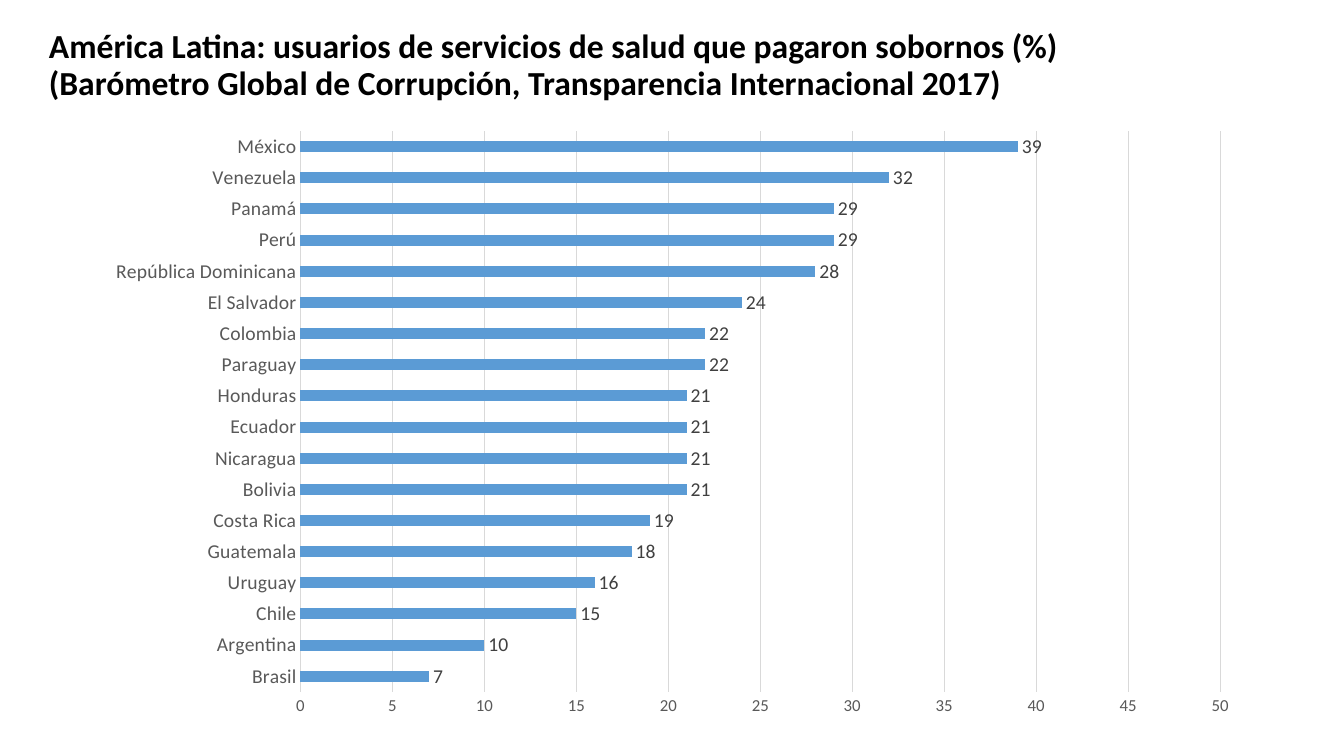
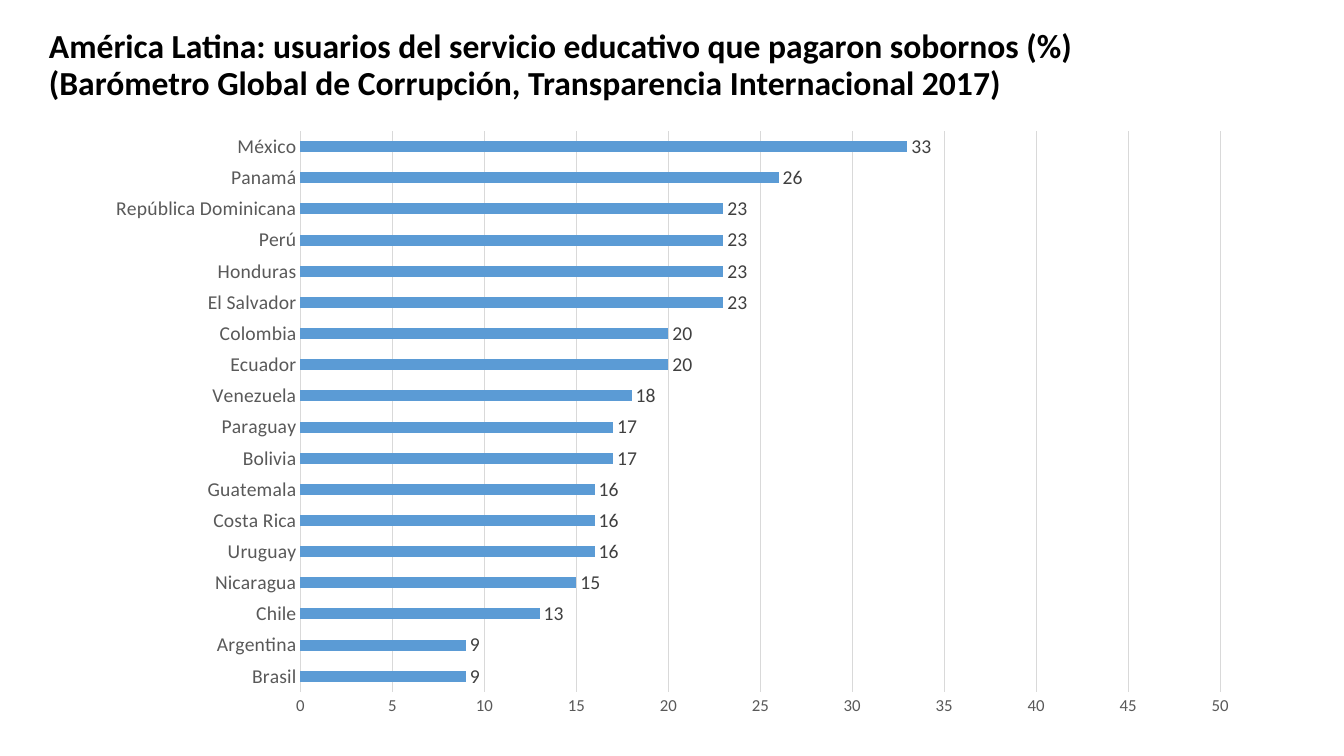
import pptx
import pptx.util
import pptx.chart.data
import pptx.dml.color
import pptx.enum.chart
import pptx.enum.text

PX = 12192000 / 1344  # EMU in one px
FONT = "Calibri"
HUES = {"title": "000000", "bar": "5B9BD5", "grid": "D9D9D9",
        "axis": "595959", "label": "404040"}
SOURCE = "(Barómetro Global de Corrupción, Transparencia Internacional 2017)"

HEALTH = {
    "Brasil": 7, "Argentina": 10, "Chile": 15, "Uruguay": 16,
    "Guatemala": 18, "Costa Rica": 19, "Bolivia": 21, "Nicaragua": 21,
    "Ecuador": 21, "Honduras": 21, "Paraguay": 22, "Colombia": 22,
    "El Salvador": 24, "República Dominicana": 28, "Perú": 29,
    "Panamá": 29, "Venezuela": 32, "México": 39,
}
SCHOOL = {
    "Brasil": 9, "Argentina": 9, "Chile": 13, "Nicaragua": 15,
    "Uruguay": 16, "Costa Rica": 16, "Guatemala": 16, "Bolivia": 17,
    "Paraguay": 17, "Venezuela": 18, "Ecuador": 20, "Colombia": 20,
    "El Salvador": 23, "Honduras": 23, "Perú": 23,
    "República Dominicana": 23, "Panamá": 26, "México": 33,
}


def emu(*nums):
    return [pptx.util.Emu(round(n * PX)) for n in nums]


def color(name):
    return pptx.dml.color.RGBColor.from_string(HUES[name])


def style(font, size, hue, bold=False):
    font.name, font.size, font.bold = FONT, pptx.util.Pt(size), bold
    font.color.rgb = color(hue)


def rule(line):
    line.color.rgb = color("grid")
    line.width = pptx.util.Pt(0.75)


def write(slide, lines, box, size=24, hue="title", bold=True):
    """Add one paragraph of text, with a line break between the lines."""
    frame = slide.shapes.add_textbox(*emu(*box)).text_frame
    frame.word_wrap = True
    frame.vertical_anchor = pptx.enum.text.MSO_ANCHOR.MIDDLE
    para = frame.paragraphs[0]
    para.line_spacing = 0.9
    for row, line in enumerate(lines):
        if row:
            para.add_line_break()
        run = para.add_run()
        run.text = line
        style(run.font, size, hue, bold)


def draw_bars(slide, shares, box):
    data = pptx.chart.data.CategoryChartData()
    data.categories = list(shares)
    data.add_series("Series 1", list(shares.values()))
    kind = pptx.enum.chart.XL_CHART_TYPE.BAR_CLUSTERED
    chart = slide.shapes.add_chart(kind, *emu(*box), data).chart
    chart.has_title = chart.has_legend = False
    style(chart.font, 10, "title")

    # Bars and their values
    plot = chart.plots[0]
    plot.gap_width = 182
    plot.vary_by_categories = False
    fill = plot.series[0].format.fill
    fill.solid()
    fill.fore_color.rgb = color("bar")
    plot.has_data_labels = True
    labels = plot.data_labels
    labels.show_value = True
    labels.position = pptx.enum.chart.XL_LABEL_POSITION.OUTSIDE_END
    style(labels.font, 14, "label")

    # Axes and grid
    cats, vals = chart.category_axis, chart.value_axis
    for axis, size in ((cats, 14), (vals, 12)):
        axis.major_tick_mark = pptx.enum.chart.XL_TICK_MARK.NONE
        axis.minor_tick_mark = pptx.enum.chart.XL_TICK_MARK.NONE
        style(axis.tick_labels.font, size, "axis")
    rule(cats.format.line)
    vals.format.line.fill.background()
    vals.minimum_scale, vals.maximum_scale, vals.major_unit = 0, 50, 5
    vals.has_major_gridlines = True
    rule(vals.major_gridlines.format.line)


def add_page(deck, title, shares):
    slide = deck.slides.add_slide(deck.slide_layouts[6])
    write(slide, [title, SOURCE], (39, 22, 1159, 88))
    draw_bars(slide, shares, (93, 119, 1159, 609))


def main():
    deck = pptx.Presentation()
    deck.slide_width, deck.slide_height = emu(1344, 756)
    add_page(deck, "América Latina: usuarios de servicios de salud que "
                   "pagaron sobornos (%)", HEALTH)
    add_page(deck, "América Latina: usuarios del servicio educativo que "
                   "pagaron sobornos (%)", SCHOOL)
    deck.save("out.pptx")


if __name__ == "__main__":
    main()
